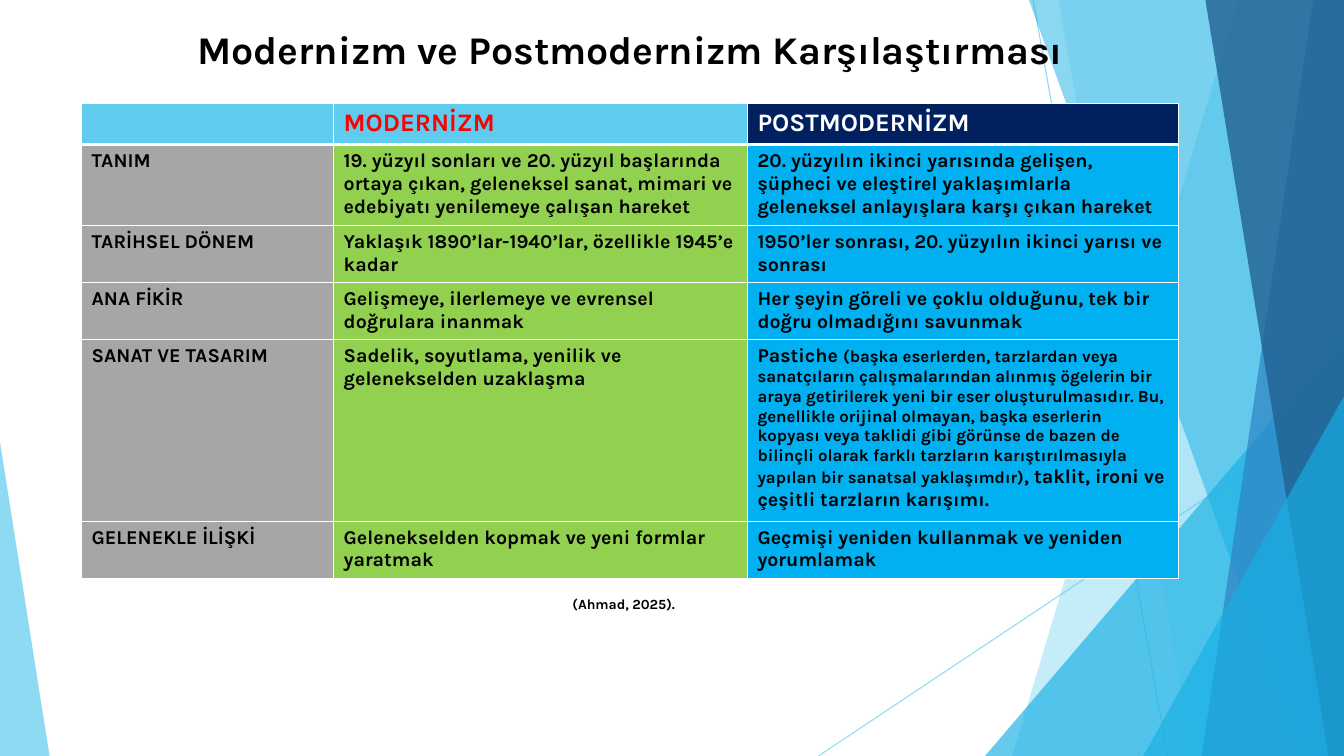
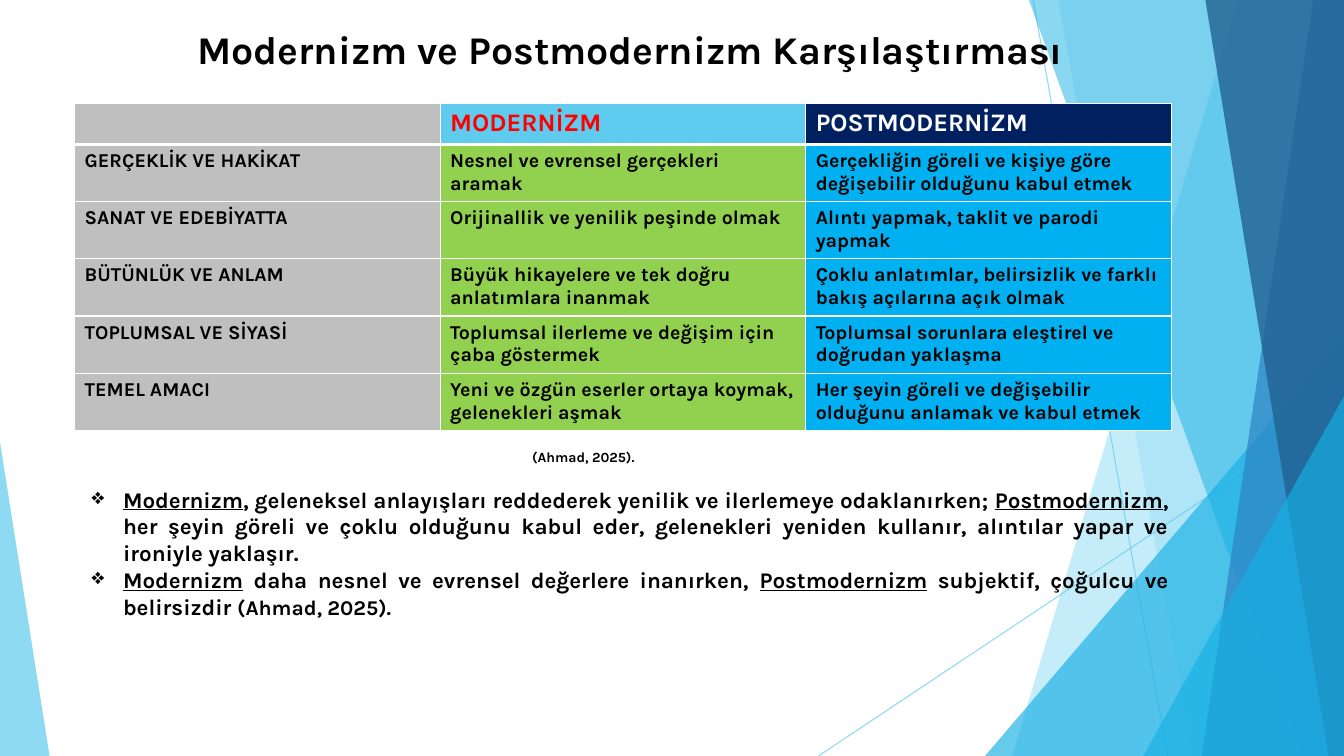
from lxml import etree
from pptx import Presentation
from pptx.dml.color import RGBColor
from pptx.enum.shapes import MSO_CONNECTOR, MSO_SHAPE
from pptx.enum.text import MSO_ANCHOR, PP_ALIGN
from pptx.oxml.ns import qn
from pptx.util import Pt

STRAIGHT = MSO_CONNECTOR.STRAIGHT
TRIANGLE = MSO_SHAPE.ISOSCELES_TRIANGLE
TOP = MSO_ANCHOR.TOP
LEFT, CENTER, JUSTIFY = PP_ALIGN.LEFT, PP_ALIGN.CENTER, PP_ALIGN.JUSTIFY

FONT = "Karla"
WIDTH, HEIGHT = 960, 540
BLACK = RGBColor(0x00, 0x00, 0x00)
WHITE = RGBColor(0xFF, 0xFF, 0xFF)
RED = RGBColor(0xFF, 0x00, 0x00)
NAVY = RGBColor(0x00, 0x20, 0x60)
GREEN = RGBColor(0x92, 0xD0, 0x50)
BLUE = RGBColor(0x00, 0xB0, 0xF0)
DARK_GRAY = RGBColor(0xA6, 0xA6, 0xA6)
LIGHT_GRAY = RGBColor(0xBF, 0xBF, 0xBF)
SKY = RGBColor(0x5F, 0xCB, 0xEF)
CYAN = RGBColor(0x17, 0xB0, 0xE4)
STEEL = RGBColor(0x2E, 0x83, 0xC3)
DEEP = RGBColor(0x22, 0x62, 0x92)

TITLE = "Modernizm ve Postmodernizm Karşılaştırması"
CITATION = "(Ahmad, 2025)."
HEADINGS = ["", "MODERNİZM", "POSTMODERNİZM"]
ROW_HEIGHT = 29.2

# Full-height bands: top left x, bottom left x, bottom right x is the slide edge
BANDS_BACK = [(884.4, 723, SKY, 36), (756, 852, SKY, 20)]
BANDS_FRONT = [(735, 929.6, CYAN, 50), (938, 858.4, STEEL, 70),
               (861, 949, DEEP, 80)]
# Triangles: left, top, width, apex position, colour, opacity
TRIANGLE_BACK = (703.6, 239.8, 256.4, 1, CYAN, 66)
TRIANGLES_FRONT = [(816.6, 283, 143.4, 1, CYAN, 66),
                   (0, 316, 35.4, 0, SKY, 70)]
RAYS = [(738, 0, 834, HEIGHT), (WIDTH, 290, 584.6, HEIGHT)]

PERIOD_ROWS = [
    ["TANIM",
     "19. yüzyıl sonları ve 20. yüzyıl başlarında ortaya çıkan, geleneksel "
     "sanat, mimari ve edebiyatı yenilemeye çalışan hareket",
     "20. yüzyılın ikinci yarısında gelişen, şüpheci ve eleştirel "
     "yaklaşımlarla geleneksel anlayışlara karşı çıkan hareket"],
    ["TARİHSEL DÖNEM",
     "Yaklaşık 1890’lar-1940’lar, özellikle 1945’e kadar",
     "1950’ler sonrası, 20. yüzyılın ikinci yarısı ve sonrası"],
    ["ANA FİKİR",
     "Gelişmeye, ilerlemeye ve evrensel doğrulara inanmak",
     "Her şeyin göreli ve çoklu olduğunu, tek bir doğru olmadığını savunmak"],
    ["SANAT VE TASARIM",
     "Sadelik, soyutlama, yenilik ve gelenekselden uzaklaşma",
     [("Pastiche ", 14),
      ("(başka eserlerden, tarzlardan veya sanatçıların çalışmalarından "
       "alınmış ögelerin bir araya getirilerek yeni bir eser "
       "oluşturulmasıdır. Bu, genellikle orijinal olmayan, başka eserlerin "
       "kopyası veya taklidi gibi görünse de bazen de bilinçli olarak farklı "
       "tarzların karıştırılmasıyla yapılan bir sanatsal yaklaşımdır)", 12),
      (", taklit, ironi ve çeşitli tarzların karışımı.", 14)]],
    ["GELENEKLE İLİŞKİ",
     "Gelenekselden kopmak ve yeni formlar yaratmak",
     "Geçmişi yeniden kullanmak ve yeniden yorumlamak"],
]
VALUE_ROWS = [
    ["GERÇEKLİK VE HAKİKAT",
     "Nesnel ve evrensel gerçekleri aramak",
     "Gerçekliğin göreli ve kişiye göre değişebilir olduğunu kabul etmek"],
    ["SANAT VE EDEBİYATTA",
     "Orijinallik ve yenilik peşinde olmak",
     "Alıntı yapmak, taklit ve parodi yapmak"],
    ["BÜTÜNLÜK VE ANLAM",
     "Büyük hikayelere ve tek doğru anlatımlara inanmak",
     "Çoklu anlatımlar, belirsizlik ve farklı bakış açılarına açık olmak"],
    ["TOPLUMSAL VE SİYASİ",
     "Toplumsal ilerleme ve değişim için çaba göstermek",
     "Toplumsal sorunlara eleştirel ve doğrudan yaklaşma"],
    ["TEMEL AMACI",
     "Yeni ve özgün eserler ortaya koymak, gelenekleri aşmak",
     "Her şeyin göreli ve değişebilir olduğunu anlamak ve kabul etmek"],
]
# Runs: text, size, underlined
SUMMARY = [
    [("Modernizm", 16, True),
     (", geleneksel anlayışları reddederek yenilik ve ilerlemeye "
      "odaklanırken; ", 16),
     ("Postmodernizm", 16, True),
     (", her şeyin göreli ve çoklu olduğunu kabul eder, gelenekleri yeniden "
      "kullanır, alıntılar yapar ve ironiyle yaklaşır.", 16)],
    [("Modernizm", 16, True),
     (" daha nesnel ve evrensel değerlere inanırken, ", 16),
     ("Postmodernizm", 16, True),
     (" subjektif, çoğulcu ve belirsizdir ", 16),
     (CITATION, 15)],
]


def set_alpha(fill_parent, percent):
    """Make every solid colour below the element translucent."""
    for clr in fill_parent.iter(qn("a:srgbClr")):
        etree.SubElement(clr, qn("a:alpha"), val=str(percent * 1000))


def paint(sp, color, percent):
    sp.shadow.inherit = False
    sp.fill.solid()
    sp.fill.fore_color.rgb = color
    sp.line.fill.background()
    set_alpha(sp._element.spPr, percent)


def add_ray(slide, x1, y1, x2, y2):
    line = slide.shapes.add_connector(STRAIGHT, Pt(x1), Pt(y1), Pt(x2), Pt(y2))
    line.line.color.rgb = SKY
    line.line.width = Pt(0.75)
    sp_pr = line._element.spPr
    set_alpha(sp_pr, 70)
    etree.SubElement(sp_pr, qn("a:effectLst"))


def add_band(slide, top_x, bottom_x, color, percent):
    """Slanted band that runs from its left edge to the slide's right edge."""
    builder = slide.shapes.build_freeform(Pt(top_x), 0)
    corners = [(WIDTH, 0), (WIDTH, HEIGHT), (bottom_x, HEIGHT)]
    builder.add_line_segments([(Pt(x), Pt(y)) for x, y in corners], close=True)
    paint(builder.convert_to_shape(), color, percent)


def add_triangle(slide, left, top, width, apex, color, percent):
    """Triangle that stands on the slide's bottom edge."""
    sp = slide.shapes.add_shape(TRIANGLE, Pt(left), Pt(top), Pt(width),
                                Pt(HEIGHT - top))
    sp.adjustments[0] = apex
    paint(sp, color, percent)


def add_facets(slide):
    for ray in RAYS:
        add_ray(slide, *ray)
    for band in BANDS_BACK:
        add_band(slide, *band)
    add_triangle(slide, *TRIANGLE_BACK)
    for band in BANDS_FRONT:
        add_band(slide, *band)
    for triangle in TRIANGLES_FRONT:
        add_triangle(slide, *triangle)


def add_run(p, text, size, underline=False, color=BLACK):
    r = p.add_run()
    r.text = text
    font = r.font
    font.name, font.size, font.bold = FONT, Pt(size), True
    font.color.rgb = color
    if underline:
        font.underline = True


def add_bullet(p, indent):
    p_pr = p._p.get_or_add_pPr()
    p_pr.set("marL", str(Pt(indent)))
    p_pr.set("indent", str(-Pt(indent)))
    etree.SubElement(p_pr, qn("a:buChar"), char="❖")


def add_text(slide, box, paragraphs, align=LEFT, bullet_indent=None):
    tf = slide.shapes.add_textbox(*map(Pt, box)).text_frame
    tf.word_wrap = True
    tf.vertical_anchor = TOP
    for i, runs in enumerate(paragraphs):
        p = tf.add_paragraph() if i else tf.paragraphs[0]
        p.alignment = align
        if bullet_indent:
            add_bullet(p, bullet_indent)
        for run in runs:
            add_run(p, *run)


def set_borders(cell, top, bottom):
    tc_pr = cell._tc.get_or_add_tcPr()
    for side, width in (("L", 1), ("R", 1), ("T", top), ("B", bottom)):
        ln = etree.SubElement(tc_pr, qn(f"a:ln{side}"), w=str(Pt(width)))
        solid = etree.SubElement(ln, qn("a:solidFill"))
        etree.SubElement(solid, qn("a:srgbClr"), val=str(WHITE))


def add_comparison(slide, left, top, widths, rows, corner, label_fill):
    """Table with a header row; body rows grow with their text."""
    all_rows = [HEADINGS] + rows
    table = slide.shapes.add_table(
        len(all_rows), len(widths), Pt(left), Pt(top), Pt(sum(widths)),
        Pt(ROW_HEIGHT * len(all_rows))).table
    table.horz_banding = False
    for column, width in zip(table.columns, widths):
        column.width = Pt(width)
    header_fills = [corner, SKY, NAVY]
    header_colors = [BLACK, RED, WHITE]
    body_fills = [label_fill, GREEN, BLUE]
    for i, values in enumerate(all_rows):
        table.rows[i].height = Pt(ROW_HEIGHT)
        for j, value in enumerate(values):
            cell = table.cell(i, j)
            set_borders(cell, 3 if i == 1 else 1, 1 if i else 3)
            cell.fill.solid()
            cell.fill.fore_color.rgb = (body_fills if i else header_fills)[j]
            p = cell.text_frame.paragraphs[0]
            if not i and value:
                add_run(p, value, 18, color=header_colors[j])
            elif value:
                runs = [(value, 14)] if isinstance(value, str) else value
                for run in runs:
                    add_run(p, *run)


def add_comparison_slide(prs, table_left, widths, rows, corner, label_fill,
                         citation_at):
    slide = prs.slides.add_slide(prs.slide_layouts[6])
    add_facets(slide)
    add_text(slide, (114.5, 14.4, 671, 41), [[(TITLE, 28)]], CENTER)
    add_comparison(slide, table_left, 74, widths, rows, corner, label_fill)
    add_text(slide, (*citation_at, 95, 19.4), [[(CITATION, 10)]])
    return slide


def main():
    prs = Presentation()
    prs.slide_width, prs.slide_height = Pt(WIDTH), Pt(HEIGHT)
    add_comparison_slide(prs, 58.3, [180, 295.6, 307.8], PERIOD_ROWS,
                         SKY, DARK_GRAY, (401.8, 422))
    slide = add_comparison_slide(prs, 53.3, [261.1] * 3, VALUE_ROWS,
                                 LIGHT_GRAY, LIGHT_GRAY, (373, 316.8))
    add_text(slide, (58.3, 343.4, 783.4, 104.4), SUMMARY, JUSTIFY, 22.5)
    prs.save("out.pptx")


if __name__ == "__main__":
    main()
